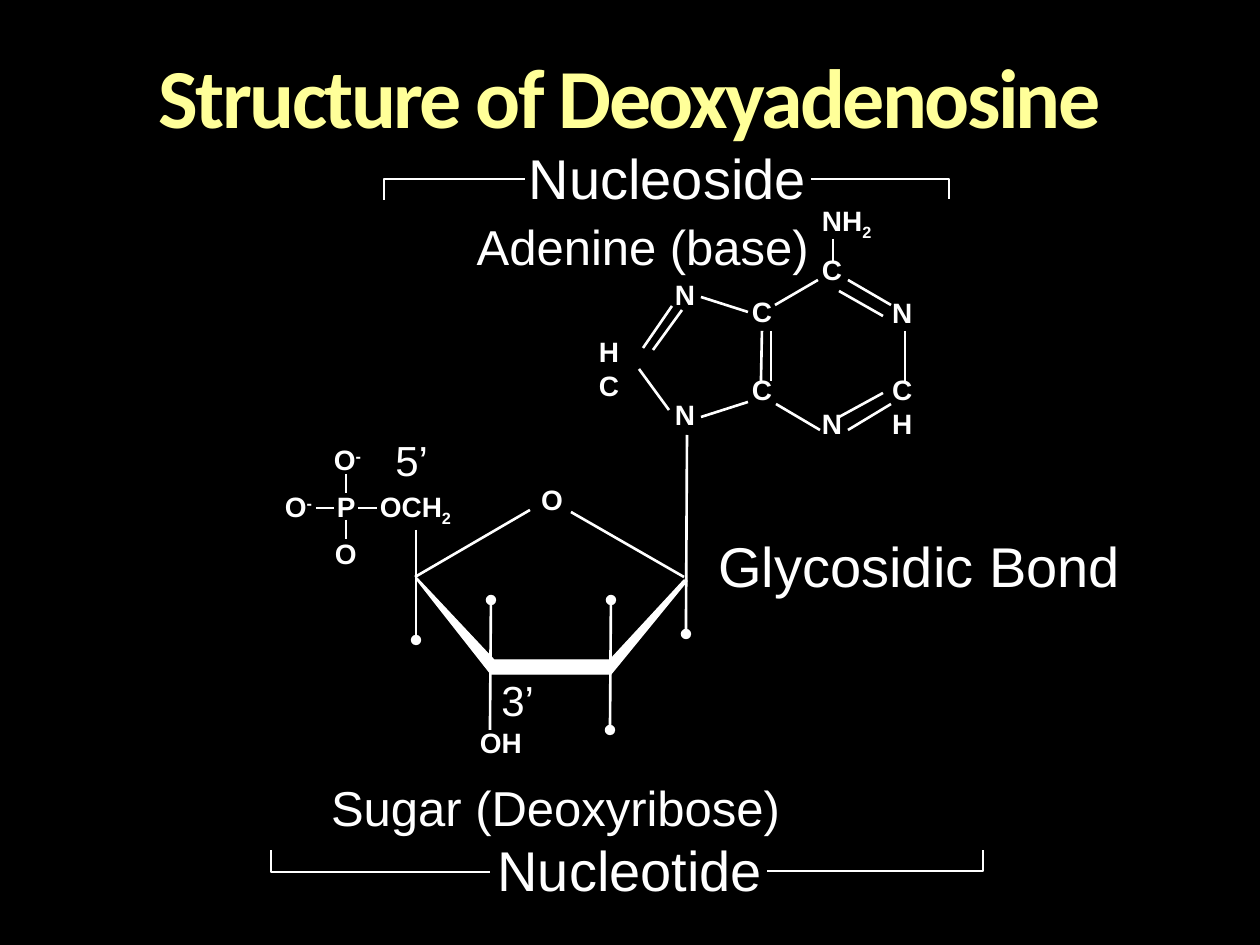
"""Build the Structure of Deoxyadenosine slide."""
from lxml import etree
from pptx import Presentation
from pptx.dml.color import RGBColor
from pptx.enum.shapes import MSO_CONNECTOR
from pptx.enum.text import MSO_ANCHOR, MSO_AUTO_SIZE, PP_ALIGN
from pptx.oxml.ns import qn
from pptx.util import Pt

PX = 914400 / 126
STRAIGHT = MSO_CONNECTOR.STRAIGHT
TOP = MSO_ANCHOR.TOP
GROW, FIXED = MSO_AUTO_SIZE.SHAPE_TO_FIT_TEXT, MSO_AUTO_SIZE.NONE
LEFT, CENTER, RIGHT = PP_ALIGN.LEFT, PP_ALIGN.CENTER, PP_ALIGN.RIGHT
WHITE, BLACK, YELLOW = "FFFFFF", "000000", "FFFF99"
BASELINES = {"_": "-25000", "^": "30000"}
ATOM_HEIGHT = 34

# text, left, top, width, height, size, alignment
LABELS = [
    ("Nucleotide", 484, 829, 292, 81, 32, CENTER),
    ("Nucleoside", 515, 137, 305, 81, 32, CENTER),
    ("Glycosidic Bond", 706, 525, 430, 79, 32, LEFT),
    ("Adenine (base)", 461, 210, 360, 72, 28, RIGHT),
    ("Sugar (Deoxyribose)", 316, 771, 479, 72, 28, CENTER),
    ("5’", 383, 428, 58, 63, 24, LEFT),
    ("3’", 489, 668, 58, 63, 24, LEFT),
]
ATOMS = [
    ("C", 752, 295, 20), ("C", 752, 373, 20), ("C\nH", 892, 373, 20),
    ("C", 822, 253, 20), ("N", 892, 296, 20), ("N", 822, 407, 20),
    ("N", 675, 398, 20), ("N", 675, 278, 20), ("H\nC", 599, 335, 20),
    ("NH_2", 822, 204, 50), ("O", 541, 483, 21), ("OH", 480, 726, 42),
    ("OCH_2", 380, 490, 73), ("O^-", 285, 490, 28), ("P", 337, 490, 19),
    ("O", 335, 537, 23), ("O^-", 334, 443, 28),
]
BONDS = [
    (891, 305, 848, 280), (883, 316, 839, 291), (891, 404, 848, 430),
    (883, 393, 839, 417), (818, 280, 775, 305), (820, 430, 776, 404),
    (762, 331, 761, 381), (771, 331, 771, 381), (905, 331, 905, 381),
    (748, 312, 701, 297), (748, 402, 701, 417), (669, 410, 639, 369),
    (653, 350, 682, 310), (643, 348, 672, 306), (833, 239, 833, 261),
    (415, 577, 530, 510), (684, 577, 571, 512), (316, 508, 334, 508),
    (358, 508, 377, 508), (346, 520, 346, 539), (346, 474, 346, 493),
]
DOTTED_BONDS = [
    ((687, 435, 686, 634), ("tailEnd",)),
    ((611, 600, 610, 730), ("headEnd", "tailEnd")),
    ((491, 600, 490, 730), ("headEnd",)),
    ((416, 530, 416, 640), ("tailEnd",)),
]
BRACKETS = [
    [(767, 871), (983, 871), (983, 850)],
    [(271, 850), (271, 872), (490, 872)],
    [(811, 179), (949, 179), (949, 199)],
    [(384, 200), (384, 179), (525, 179)],
]
SUGAR_EDGE = [(417, 580), (491, 674), (611, 674), (687, 581),
              (684, 580), (610, 660), (494, 660), (417, 578)]


def px(length):
    return round(length * PX)


def color(value):
    return RGBColor.from_string(value)


def add_text(slide, text, left, top, width, height, size=16, align=LEFT, font="Arial",
             fill=WHITE, bold=False, inset=True, wrap=False, spacing=None):
    box = slide.shapes.add_textbox(px(left), px(top), px(width), px(height))
    frame = box.text_frame
    frame.word_wrap = wrap
    frame.auto_size = FIXED if wrap else GROW
    frame.vertical_anchor = TOP
    if not inset:
        frame.margin_left = frame.margin_right = frame.margin_top = frame.margin_bottom = 0
    for index, line in enumerate(text.split("\n")):
        paragraph = frame.add_paragraph() if index else frame.paragraphs[0]
        paragraph.alignment = align
        mark = next((sign for sign in BASELINES if sign in line), None)
        for part, words in enumerate(line.split(mark) if mark else [line]):
            run = paragraph.add_run()
            run.text = words
            run.font.size, run.font.name, run.font.bold = Pt(size), font, bold
            run.font.color.rgb = color(fill)
            if part:
                run.font._element.set("baseline", BASELINES[mark])
            if spacing:
                run.font._element.set("spc", str(spacing))


def add_bond(slide, ends, dots=()):
    bond = slide.shapes.add_connector(STRAIGHT, *map(px, ends))
    bond.line.color.rgb = color(WHITE)
    bond.line.width = Pt(1.5)
    outline = bond.line._get_or_add_ln()
    for dot in dots:
        etree.SubElement(outline, qn(f"a:{dot}"), type="oval")
    etree.SubElement(bond._element.spPr, qn("a:effectLst"))


def add_outline(slide, points, closed=False, width=1.5):
    builder = slide.shapes.build_freeform(*points[0], scale=PX)
    builder.add_line_segments(points[1:], close=closed)
    outline = builder.convert_to_shape()
    outline.shadow.inherit = False
    outline.line.color.rgb = color(WHITE)
    outline.line.width = Pt(width)
    if closed:
        outline.fill.solid()
        outline.fill.fore_color.rgb = color(WHITE)
    else:
        outline.fill.background()


def main():
    deck = Presentation()
    deck.slide_width, deck.slide_height = px(1260), px(945)
    slide = deck.slides.add_slide(deck.slide_layouts[6])
    slide.background.fill.solid()
    slide.background.fill.fore_color.rgb = color(BLACK)

    add_text(slide, "Structure of Deoxyadenosine", 63, 38, 1134, 158, size=48, align=CENTER,
             font="Calibri", fill=YELLOW, bold=True, wrap=True, spacing=-150)
    for bracket in BRACKETS:
        add_outline(slide, bracket)
    add_outline(slide, SUGAR_EDGE, closed=True, width=0.75)
    for ends in BONDS:
        add_bond(slide, ends)
    for ends, dots in DOTTED_BONDS:
        add_bond(slide, ends, dots)
    for text, left, top, width, height, size, align in LABELS:
        add_text(slide, text, left, top, width, height, size=size, align=align)
    for text, left, top, width in ATOMS:
        height = ATOM_HEIGHT * len(text.split("\n"))
        add_text(slide, text, left, top, width, height, bold=True, inset=False)
    deck.save("out.pptx")


if __name__ == "__main__":
    main()
